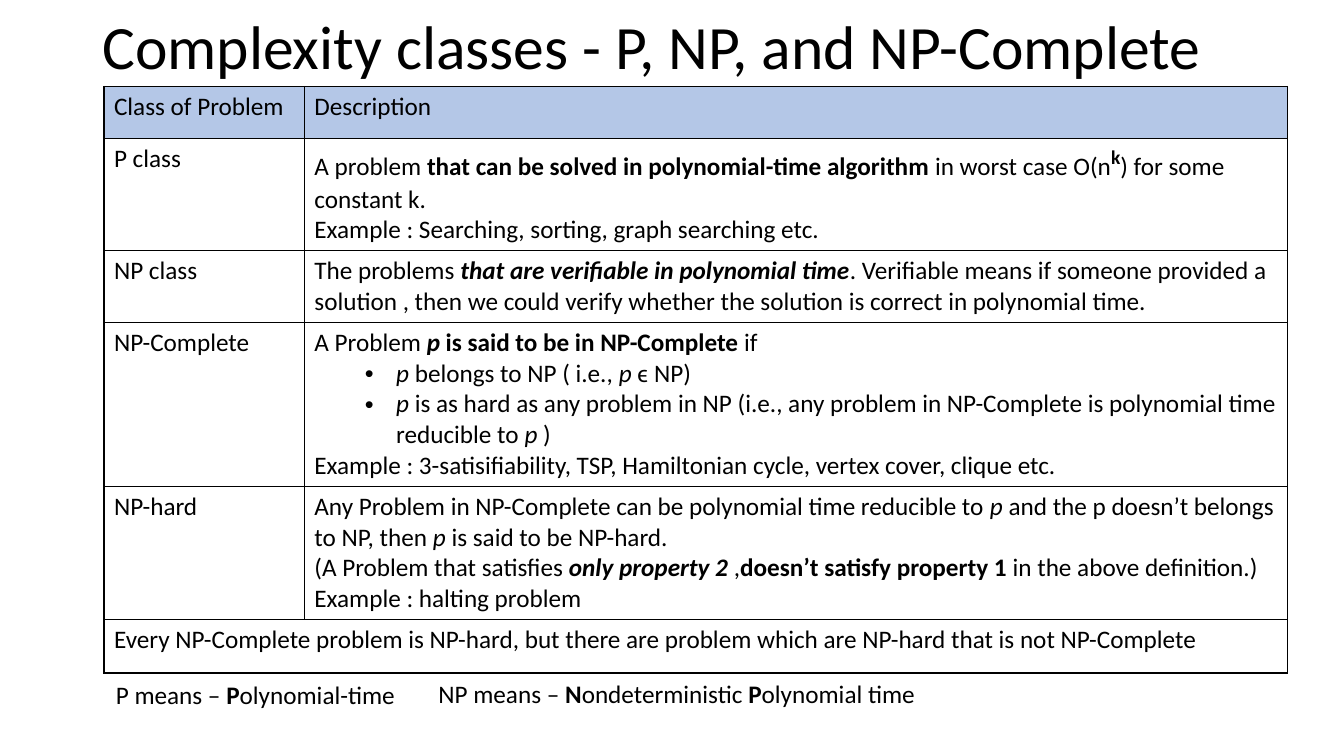
from dataclasses import dataclass

from pptx import Presentation
from pptx.dml.color import RGBColor
from pptx.enum.text import MSO_ANCHOR, MSO_AUTO_SIZE
from pptx.oxml import parse_xml
from pptx.oxml.ns import nsdecls
from pptx.slide import Slide
from pptx.table import _Cell as Cell
from pptx.text.text import TextFrame, _Paragraph as Paragraph
from pptx.util import Cm, Pt

BLACK = RGBColor(0x00, 0x00, 0x00)
HEADER_BLUE = RGBColor(0xB4, 0xC7, 0xE7)
FONT_NAME = "Calibri"
BODY_SIZE = 18
TITLE_SIZE = 44
BORDER_WIDTH = Pt(1)
COLUMN_WIDTHS = (5.05, 24.77)
ROW_HEIGHTS = (1.3, 2.24, 1.8, 3.58, 2.9, 1.35)


@dataclass(frozen=True)
class Span:
    text: str
    bold: bool = False
    italic: bool = False
    superscript: bool = False
    size: float = BODY_SIZE


@dataclass(frozen=True)
class Line:
    spans: tuple[Span, ...]
    bulleted: bool = False


@dataclass(frozen=True)
class Caption:
    left: float
    top: float
    width: float
    height: float
    line: Line
    wrap: bool = True
    is_title: bool = False


@dataclass(frozen=True)
class ProblemClass:
    name: str
    description: tuple[Line, ...]


def line(*parts: str | Span, bulleted: bool = False) -> Line:
    spans = tuple(Span(part) if isinstance(part, str) else part for part in parts)
    return Line(spans, bulleted)


def bold(text: str) -> Span:
    return Span(text, bold=True)


def italic(text: str) -> Span:
    return Span(text, italic=True)


def bold_italic(text: str) -> Span:
    return Span(text, bold=True, italic=True)


PROBLEM_CLASSES = (
    ProblemClass("Class of Problem", (line("Description"),)),
    ProblemClass("P class", (
        line("A problem ", bold("that can be solved in polynomial-time algorithm"),
             " in worst case O(n", Span("k", bold=True, superscript=True, size=24),
             ") for some constant k."),
        line("Example : Searching, sorting, graph searching etc."),
    )),
    ProblemClass("NP class", (
        line("The problems ", bold_italic("that are verifiable in polynomial time"),
             ". Verifiable means if someone provided a solution , then we could verify "
             "whether the solution is correct in polynomial time."),
    )),
    ProblemClass("NP-Complete", (
        line("A Problem ", bold_italic("p"), bold(" is said to be in NP-Complete"), " if"),
        line(italic("p "), "belongs to NP ( i.e., ", italic("p "), "ϵ NP)", bulleted=True),
        line(italic("p "), "is as hard as any problem in NP (i.e., any problem in "
             "NP-Complete is polynomial time reducible to ", italic("p "), ")", bulleted=True),
        line("Example : 3-satisifiability, TSP, Hamiltonian cycle, vertex cover, clique etc."),
    )),
    ProblemClass("NP-hard", (
        line("Any Problem in NP-Complete can be polynomial time reducible to ", italic("p"),
             " and the p doesn’t belongs to NP, then ", italic("p"), " is said to be NP-hard."),
        line("(A Problem that satisfies ", bold_italic("only property 2"), " ,",
             bold("doesn’t satisfy property 1"), " in the above definition.)"),
        line("Example : halting problem"),
    )),
)
CLOSING_REMARK = line("Every NP-Complete problem is NP-hard, but there are problem which are "
                      "NP-hard that is not NP-Complete")

CAPTIONS = (
    Caption(2.33, 0.2, 29.21, 2.08,
            line(Span("Complexity classes - P, NP, and NP-Complete", size=TITLE_SIZE)),
            is_title=True),
    Caption(2.67, 17, 7.62, 1.03,
            line("P means – ", bold("P"), "olynomial-time"), wrap=False),
    Caption(10.8, 16.97, 16.94, 1.03,
            line("NP means – ", bold("N"), "ondeterministic ", bold("P"), "olynomial time")),
)


def add_bullet(paragraph: Paragraph) -> None:
    paragraph.level = 1
    properties = paragraph._p.get_or_add_pPr()
    properties.set("marL", str(Cm(2.06)))
    properties.set("indent", str(Cm(-0.79)))
    properties.append(parse_xml(f'<a:buFont {nsdecls("a")} typeface="Arial"/>'))
    properties.append(parse_xml(f'<a:buChar {nsdecls("a")} char="•"/>'))


def write_lines(text_frame: TextFrame, lines: tuple[Line, ...]) -> None:
    for index, text_line in enumerate(lines):
        paragraph = text_frame.add_paragraph() if index else text_frame.paragraphs[0]
        if text_line.bulleted:
            add_bullet(paragraph)
        for span in text_line.spans:
            run = paragraph.add_run()
            run.text = span.text
            run.font.name = FONT_NAME
            run.font.size = Pt(span.size)
            run.font.bold = span.bold
            run.font.italic = span.italic
            run.font.color.rgb = BLACK
            if span.superscript:
                run._r.get_or_add_rPr().set("baseline", "30000")


def style_cell(cell: Cell, is_header: bool) -> None:
    properties = cell._tc.get_or_add_tcPr()
    for side in ("lnL", "lnR", "lnT", "lnB"):
        properties.append(parse_xml(
            f'<a:{side} {nsdecls("a")} w="{BORDER_WIDTH}"><a:solidFill>'
            f'<a:srgbClr val="{BLACK}"/></a:solidFill></a:{side}>'))
    if is_header:
        cell.fill.solid()
        cell.fill.fore_color.rgb = HEADER_BLUE
    else:
        cell.fill.background()


def add_caption(slide: Slide, caption: Caption) -> None:
    shape = slide.shapes.add_textbox(
        Cm(caption.left), Cm(caption.top), Cm(caption.width), Cm(caption.height))
    text_frame = shape.text_frame
    text_frame.word_wrap = caption.wrap
    write_lines(text_frame, (caption.line,))
    if caption.is_title:
        text_frame.vertical_anchor = MSO_ANCHOR.MIDDLE
        text_frame.paragraphs[0].line_spacing = 0.9
    else:
        text_frame.auto_size = MSO_AUTO_SIZE.SHAPE_TO_FIT_TEXT


def add_class_table(slide: Slide) -> None:
    table = slide.shapes.add_table(
        len(ROW_HEIGHTS), len(COLUMN_WIDTHS), Cm(2.62), Cm(2.18),
        Cm(sum(COLUMN_WIDTHS)), Cm(sum(ROW_HEIGHTS))).table
    table.first_row = False
    table.horz_banding = False
    for column, width in zip(table.columns, COLUMN_WIDTHS):
        column.width = Cm(width)
    for index, (row, height) in enumerate(zip(table.rows, ROW_HEIGHTS)):
        row.height = Cm(height)
        for cell in row.cells:
            style_cell(cell, is_header=index == 0)
    for row, problem_class in zip(table.rows, PROBLEM_CLASSES):
        name_cell, description_cell = row.cells
        write_lines(name_cell.text_frame, (line(problem_class.name),))
        write_lines(description_cell.text_frame, problem_class.description)
    last_row = len(ROW_HEIGHTS) - 1
    closing_cell = table.cell(last_row, 0)
    closing_cell.merge(table.cell(last_row, 1))
    write_lines(closing_cell.text_frame, (CLOSING_REMARK,))


def main() -> None:
    presentation = Presentation()
    presentation.slide_width = Cm(33.87)
    presentation.slide_height = Cm(19.05)
    slide = presentation.slides.add_slide(presentation.slide_layouts[6])
    add_class_table(slide)
    for caption in CAPTIONS:
        add_caption(slide, caption)
    presentation.save("out.pptx")


if __name__ == "__main__":
    main()
